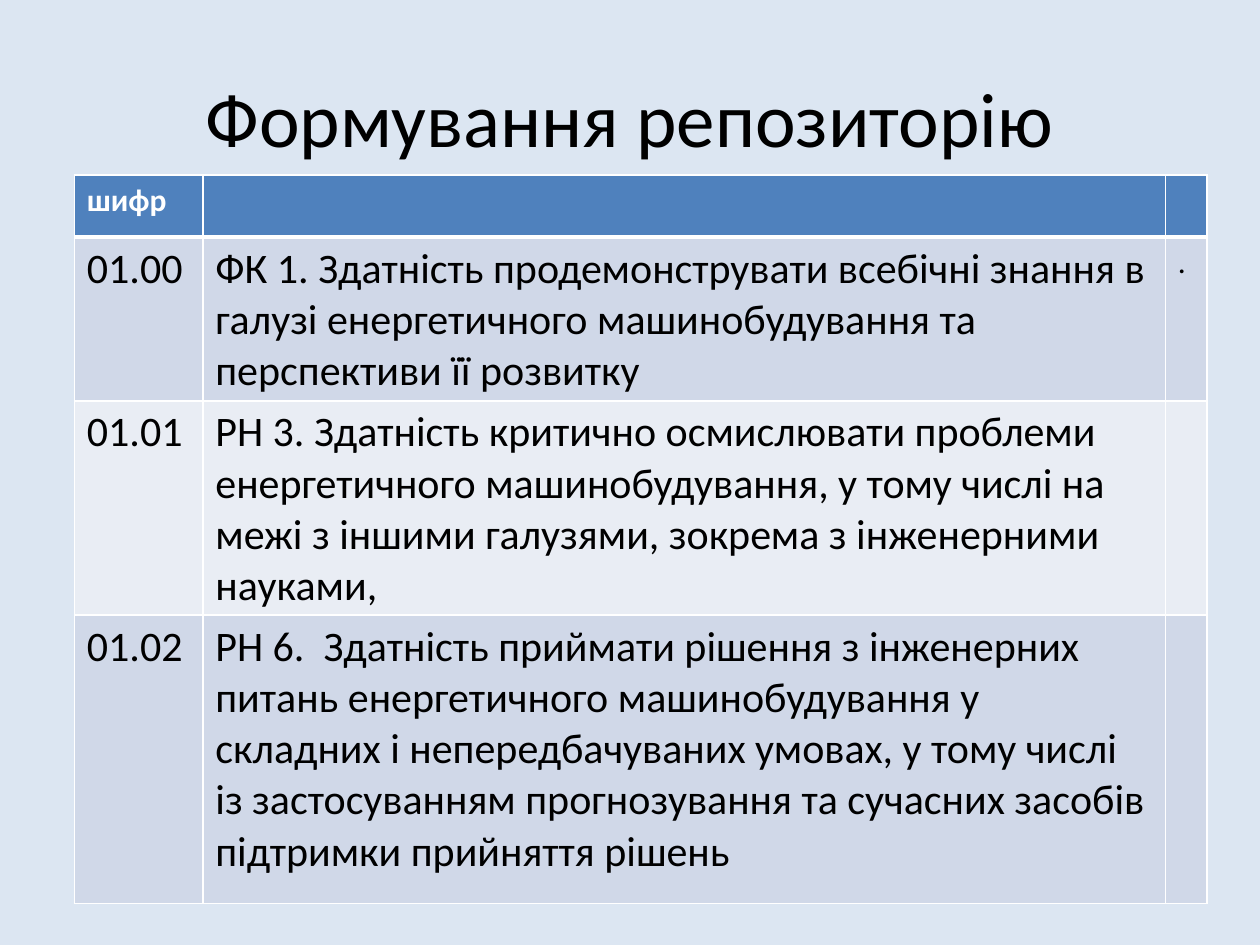
import pptx
import pptx.util
import pptx.dml.color
import pptx.enum.text
import pptx.oxml
import pptx.oxml.ns

Pt = pptx.util.Pt
RGB = pptx.dml.color.RGBColor
TEXT = pptx.enum.text

TITLE = "Формування репозиторію"
ROWS = [
    ("шифр", "", ""),
    ("01.00", "ФК 1. Здатність продемонструвати всебічні знання в галузі енергетичного машинобудування та перспективи її розвитку", "."),
    ("01.01", "РН 3. Здатність критично осмислювати проблеми енергетичного машинобудування, у тому числі на межі з іншими галузями, зокрема з інженерними науками,", ""),
    ("01.02", "РН 6.  Здатність приймати рішення з інженерних питань енергетичного машинобудування у складних і непередбачуваних умовах, у тому числі із застосуванням прогнозування та сучасних засобів підтримки прийняття рішень", ""),
]
WIDTHS = [73.4, 550, 23.9]
HEIGHTS = [35.3, 86.4, 112.3, 165]

FONT = "Calibri"
BACK = RGB(0xDC, 0xE6, 0xF2)
BLACK = RGB(0, 0, 0)
WHITE = RGB(0xFF, 0xFF, 0xFF)
HEAD = RGB(0x4F, 0x81, 0xBD)
BANDS = [RGB(0xE9, 0xED, 0xF4), RGB(0xD0, 0xD8, 0xE8)]


def write(para, text, size, color, bold=False):
    if not text:
        para.font.size = Pt(size)
        return
    run = para.add_run()
    run.text = text
    font = run.font
    font.name = FONT
    font.size = Pt(size)
    font.bold = bold
    font.color.rgb = color


def paint(cell, fill, edges):
    cell.fill.solid()
    cell.fill.fore_color.rgb = fill
    props = cell._tc.get_or_add_tcPr()
    for spot, (side, width) in enumerate(edges.items()):
        line = pptx.oxml.parse_xml(
            f'<a:ln{side} {pptx.oxml.ns.nsdecls("a")} w="{int(Pt(width))}">'
            f'<a:solidFill><a:srgbClr val="{WHITE}"/></a:solidFill>'
            f'</a:ln{side}>'
        )
        props.insert(spot, line)


def add_title(slide):
    box = slide.shapes.add_textbox(Pt(36), Pt(21.6), Pt(648), Pt(90))
    frame = box.text_frame
    frame.word_wrap = True
    frame.vertical_anchor = TEXT.MSO_ANCHOR.MIDDLE
    para = frame.paragraphs[0]
    para.alignment = TEXT.PP_ALIGN.CENTER
    write(para, TITLE, 44, BLACK)


def add_grid(slide):
    frame = slide.shapes.add_table(
        len(ROWS), len(WIDTHS), Pt(42.5), Pt(100.1),
        Pt(sum(WIDTHS)), Pt(sum(HEIGHTS)))
    table = frame.table
    for col, width in zip(table.columns, WIDTHS):
        col.width = Pt(width)
    for i, (row, height) in enumerate(zip(ROWS, HEIGHTS)):
        table.rows[i].height = Pt(height)
        top = i == 0
        fill = HEAD if top else BANDS[i % 2]
        edges = {"L": 1, "R": 1, "T": 3 if i == 1 else 1, "B": 3 if top else 1}
        for j, text in enumerate(row):
            cell = table.cell(i, j)
            size = 18 if top or j == 2 else 24
            write(cell.text_frame.paragraphs[0], text, size,
                  WHITE if top else BLACK, top)
            paint(cell, fill, edges)


def main():
    deck = pptx.Presentation()
    deck.slide_width = Pt(720)
    deck.slide_height = Pt(540)
    slide = deck.slides.add_slide(deck.slide_layouts[6])
    slide.background.fill.solid()
    slide.background.fill.fore_color.rgb = BACK
    add_title(slide)
    add_grid(slide)
    deck.save("out.pptx")


if __name__ == "__main__":
    main()
